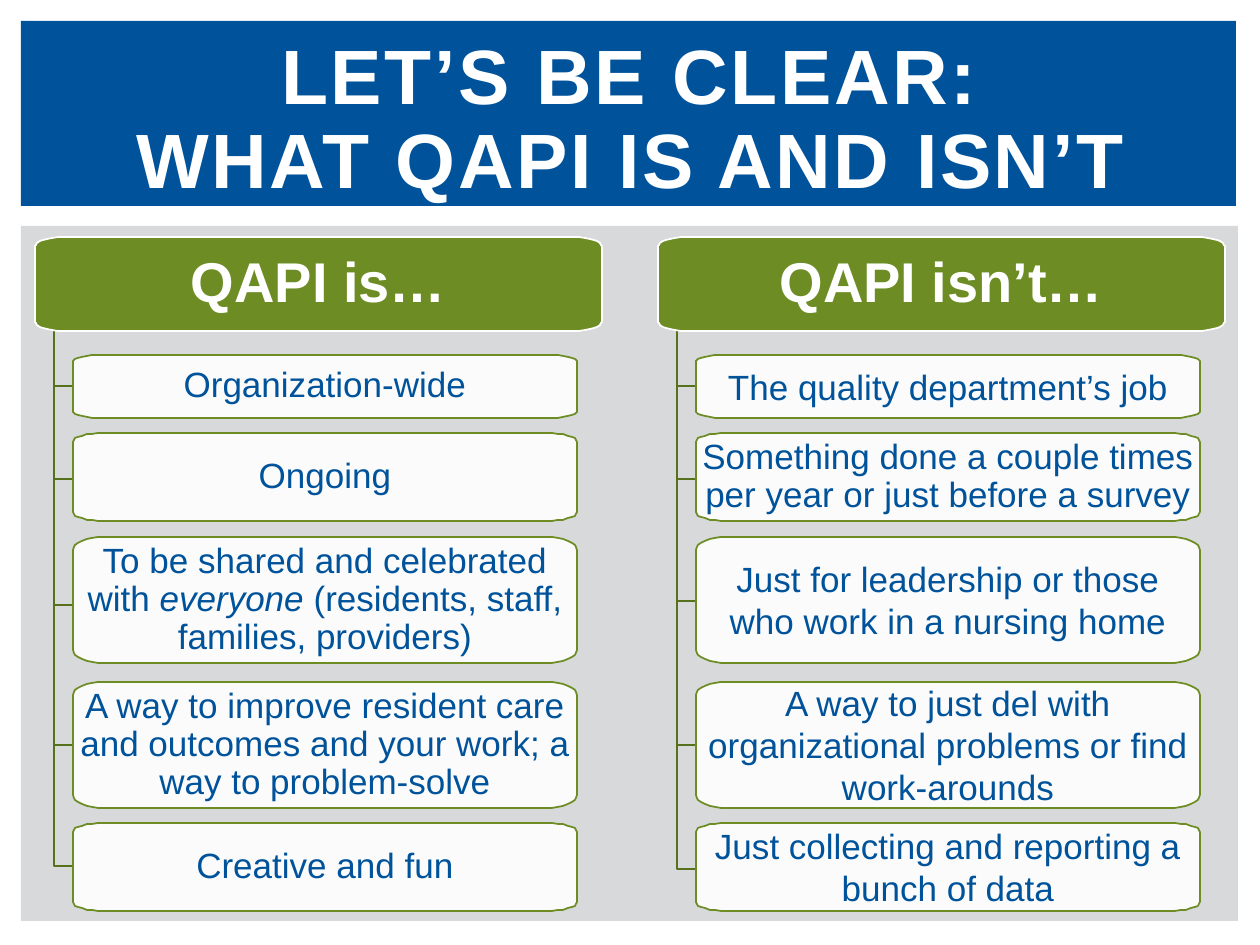
"""Build the slide that contrasts what QAPI is with what it isn't."""
import math

from lxml import etree
from pptx import Presentation
from pptx.dml.color import RGBColor
from pptx.enum.shapes import MSO_SHAPE
from pptx.enum.text import MSO_ANCHOR, PP_ALIGN
from pptx.oxml.ns import qn
from pptx.util import Pt

RECT = MSO_SHAPE.RECTANGLE
MIDDLE = MSO_ANCHOR.MIDDLE
CENTER = PP_ALIGN.CENTER

WHITE = RGBColor(0xFF, 0xFF, 0xFF)
BLUE = RGBColor(0x00, 0x53, 0x9B)
GREY = RGBColor(0xD8, 0xD9, 0xDA)
GREEN = RGBColor(0x6D, 0x8D, 0x24)
DARK_GREEN = RGBColor(0x57, 0x71, 0x1D)

SCALE = 914400 / 126
FONT = "Arial"

HEADER_TOP, HEADER_W, HEADER_H = 237, 567, 94
TRUNK_DX, ITEM_DX, ITEM_W = 19, 38, 504
FIRST_DROP, DROP_STEP = 71, 118
ROWS = [(355, 63), (433, 88), (537, 126), (682, 126), (823, 88)]

COLUMNS = [
    (35, "QAPI is…", [
        (["Organization-wide"], 386, 0.9, 5),
        (["Ongoing"], 479, 0.9, 5),
        (["To be shared and celebrated with ", "everyone",
          " (residents, staff, families, providers)"], 605, 0.9, 5),
        (["A way to improve resident care and outcomes and your work; "
          "a way to problem-solve"], 745, 0.9, 5),
        (["Creative and fun"], 866, 0.9, 5),
    ]),
    (658, "QAPI isn’t…", [
        (["The quality department’s job"], 386, 1.0, 5),
        (["Something done a couple times per year or just before a survey"],
         479, 0.9, 0),
        (["Just for leadership or those who work in a nursing home"],
         601, 1.0, 5),
        (["A way to just del with organizational problems or find "
          "work-arounds"], 745, 1.0, 5),
        (["Just collecting and reporting a bunch of data"], 869, 1.0, 5),
    ]),
]


def px(n):
    """Convert pixels to EMU."""
    return round(n * SCALE)


def add_band(slide, x, y, w, h, color):
    """Add a plain background rectangle."""
    sp = slide.shapes.add_shape(RECT, px(x), px(y), px(w), px(h))
    sp.shadow.inherit = False
    sp.fill.solid()
    sp.fill.fore_color.rgb = color
    sp.line.fill.background()


def add_outline(slide, points, color, closed):
    """Add a freeform through the given pixel points."""
    fb = slide.shapes.build_freeform(*points[0], scale=SCALE)
    fb.add_line_segments(points[1:], close=closed)
    sp = fb.convert_to_shape()
    sp.shadow.inherit = False
    sp.line.color.rgb = color
    sp.line.width = Pt(1)
    return sp


def rounded_points(x, y, w, h, rx, ry, steps=8):
    """Return the outline of a box with elliptical corners."""
    corners = [(x + w - rx, y + h - ry), (x + rx, y + h - ry),
               (x + rx, y + ry), (x + w - rx, y + ry)]
    points = []
    for i, (cx, cy) in enumerate(corners):
        for k in range(steps + 1):
            a = math.pi / 2 * (i + k / steps)
            points.append((cx + rx * math.cos(a), cy + ry * math.sin(a)))
    return points


def style_runs(p, size, color, bold=False):
    """Format every run of a paragraph."""
    for r in p.runs:
        r.font.name = FONT
        r.font.size = Pt(size)
        r.font.bold = bold
        r.font.color.rgb = color


def set_text(sp, runs, size, color, spacing, inset_x, inset_y, bold=False):
    """Fill a box with centred text whose second run is italic."""
    tf = sp.text_frame
    tf.word_wrap = True
    tf.vertical_anchor = MIDDLE
    tf.margin_left = tf.margin_right = px(inset_x)
    tf.margin_top = tf.margin_bottom = px(inset_y)
    p = tf.paragraphs[0]
    p.alignment = CENTER
    p.line_spacing = spacing
    after = etree.SubElement(p._p.get_or_add_pPr(), qn("a:spcAft"))
    etree.SubElement(after, qn("a:spcPct"), val="35000")
    for i, text in enumerate(runs):
        r = p.add_run()
        r.text = text
        r.font.italic = i == 1
    style_runs(p, size, color, bold)


def add_box(slide, x, y, w, h, rx, fill, line):
    """Add a filled box with elliptical corners."""
    sp = add_outline(slide, rounded_points(x, y, w, h, rx, h / 10), line, True)
    sp.fill.solid()
    sp.fill.fore_color.rgb = fill
    return sp


def add_elbow(slide, x, y, index):
    """Add the branch from the trunk to the item at height y."""
    top = y - FIRST_DROP - DROP_STEP * index
    points = [(x, top), (x, y), (x + ITEM_DX - TRUNK_DX, y)]
    add_outline(slide, points, DARK_GREEN, False).fill.background()


def add_column(slide, x, heading, items):
    """Add one heading with its branches and items."""
    for i, (_, y, _, _) in enumerate(items):
        add_elbow(slide, x + TRUNK_DX, y, i)
    sp = add_box(slide, x, HEADER_TOP, HEADER_W, HEADER_H, 28, GREEN, WHITE)
    set_text(sp, [heading], 32, WHITE, 0.9, 9, 6, bold=True)
    for (top, height), (runs, _, spacing, inset) in zip(ROWS, items):
        sp = add_box(slide, x + ITEM_DX, top, ITEM_W, height, 31, WHITE, GREEN)
        color = sp.fill._xPr.find(qn("a:solidFill"))[0]
        etree.SubElement(color, qn("a:alpha"), val="90000")
        set_text(sp, runs, 20, BLUE, spacing, inset, 4)


def add_title(slide, text):
    """Add the two-line title."""
    sp = slide.shapes.add_textbox(px(53), px(49), px(1155), px(145))
    tf = sp.text_frame
    tf.word_wrap = True
    tf.vertical_anchor = MIDDLE
    tf.text = text
    p = tf.paragraphs[0]
    p.alignment = CENTER
    p.line_spacing = 0.9
    style_runs(p, 44, WHITE, bold=True)
    for r in p.runs:
        r.font._element.set("spc", "150")


def main():
    """Build and save the slide."""
    prs = Presentation()
    prs.slide_width, prs.slide_height = px(1260), px(945)
    s = prs.slides.add_slide(prs.slide_layouts[6])
    add_band(s, 21, 226, 1217, 695, GREY)
    add_band(s, 21, 21, 1215, 185, BLUE)
    for x, heading, items in COLUMNS:
        add_column(s, x, heading, items)
    add_title(s, "LET’S BE CLEAR:\vWHAT QAPI IS AND ISN’T")
    prs.save("out.pptx")


if __name__ == "__main__":
    main()
